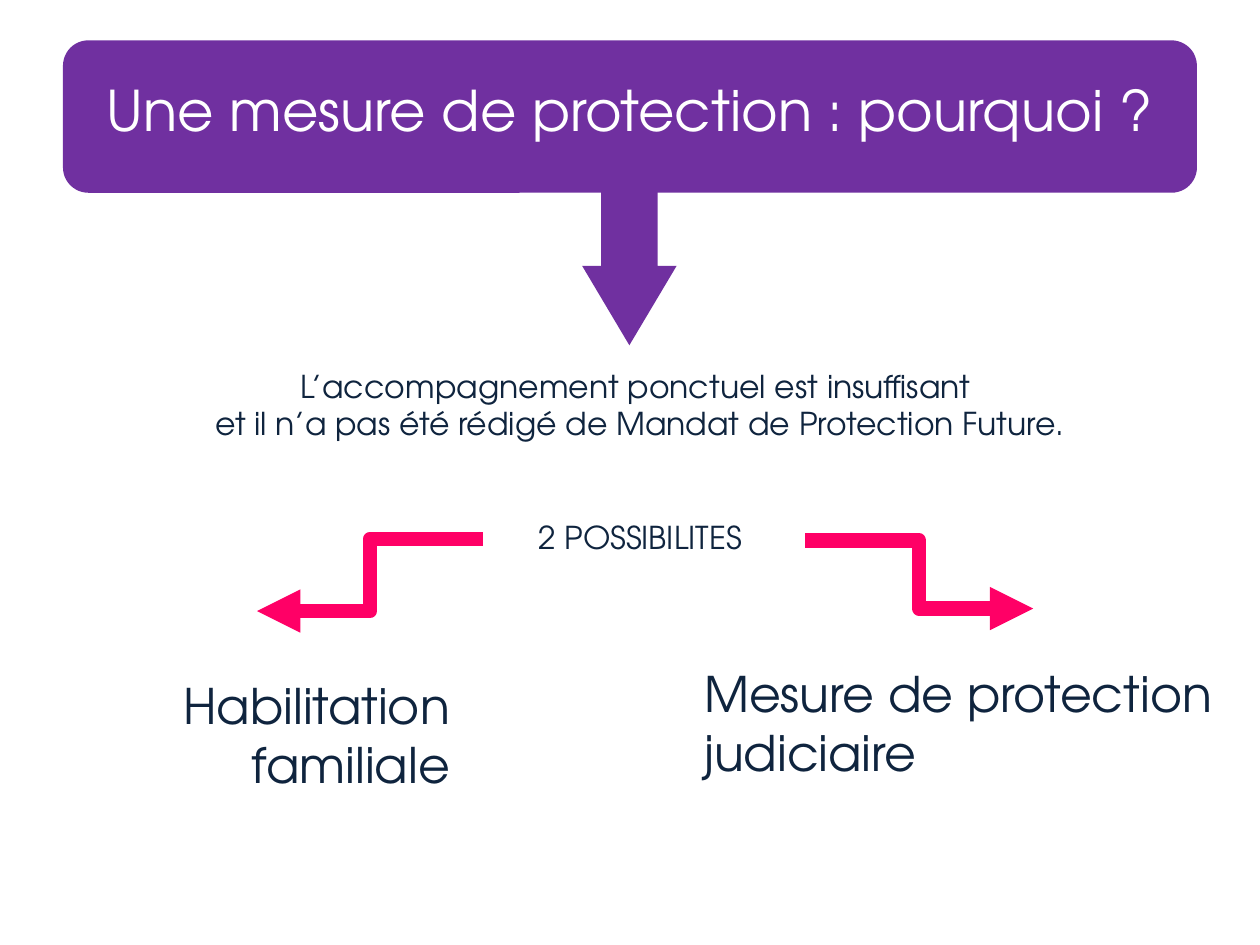
from dataclasses import dataclass

from lxml.etree import SubElement as Sub
from pptx import Presentation
from pptx.dml.color import RGBColor as Rgb
from pptx.enum.shapes import MSO_CONNECTOR as Conn, MSO_SHAPE as Kind
from pptx.enum.text import MSO_ANCHOR as Anchor, MSO_AUTO_SIZE as Auto, PP_ALIGN as Align
from pptx.oxml.ns import qn
from pptx.util import Inches, Pt


@dataclass(frozen=True)
class Theme:
    font: str = "TeX Gyre Adventor"
    fill: Rgb = Rgb(0x70, 0x30, 0xA0)
    link: Rgb = Rgb(0xFF, 0x00, 0x66)
    ink: Rgb = Rgb(0x0F, 0x24, 0x3E)
    white: Rgb = Rgb(0xFF, 0xFF, 0xFF)
    head: Pt = Pt(32)
    body: Pt = Pt(18)
    large: Pt = Pt(28)
    line: Pt = Pt(8.25)
    gap: Pt = Pt(43.2)


look = Theme()


def scale(box):
    return [Inches(n) for n in box]


def write(frame, lines, size, color, align):
    frame.word_wrap = True
    frame.auto_size = Auto.NONE
    frame.vertical_anchor = Anchor.TOP
    for i, line in enumerate(lines):
        para = frame.add_paragraph() if i else frame.paragraphs[0]
        para.alignment = align
        run = para.add_run()
        run.text = line
        run.font.name = look.font
        run.font.size = size
        run.font.color.rgb = color


def add_text(slide, box, lines, size, align):
    frame = slide.shapes.add_textbox(*scale(box)).text_frame
    write(frame, lines, size, look.ink, align)
    return frame


def add_solid(slide, kind, box):
    shape = slide.shapes.add_shape(kind, *scale(box))
    shape.shadow.inherit = False
    shape.fill.solid()
    shape.fill.fore_color.rgb = look.fill
    shape.line.fill.background()
    return shape


def add_banner(slide, box, text):
    left, top, width, height = box
    panel = add_solid(slide, Kind.ROUNDED_RECTANGLE, box)
    title = slide.shapes.title
    inset = 0.23
    title.left, title.top, title.width, title.height = scale(
        (left, top + inset, width, height - inset))
    write(title.text_frame, [text], look.head, look.white, Align.CENTER)
    panel.element.addnext(title.element)


def add_drop(slide, box):
    arrow = add_solid(slide, Kind.DOWN_ARROW, box)
    arrow.adjustments[0] = 0.6
    arrow.adjustments[1] = 0.84


def add_reason(slide, box, lines):
    frame = add_text(slide, box, lines, look.body, Align.CENTER)
    frame.paragraphs[-1].space_before = look.gap


def add_link(slide, start, end):
    link = slide.shapes.add_connector(Conn.ELBOW, *scale(start + end))
    link.line.color.rgb = look.link
    link.line.width = look.line
    props = link.element.spPr
    line = props.find(qn("a:ln"))
    Sub(line, qn("a:round"))
    Sub(line, qn("a:tailEnd"), type="triangle")
    Sub(props, qn("a:effectLst"))


def main():
    deck = Presentation()
    deck.slide_width, deck.slide_height = Inches(10), Inches(7.5)
    slide = deck.slides.add_slide(deck.slide_layouts[5])
    add_banner(slide, (0.5, 0.32, 9, 1.21), "Une mesure de protection : pourquoi ?")
    add_drop(slide, (4.62, 1.49, 0.75, 1.25))
    add_reason(slide, (0.5, 2.86, 9.16, 1.62), [
        "L’accompagnement ponctuel est insuffisant ",
        "et il n’a pas été rédigé de Mandat de Protection Future.",
        "2 POSSIBILITES",
    ])
    add_text(slide, (5.49, 5.22, 4.42, 1.01),
             ["Mesure de protection judiciaire"], look.large, Align.LEFT)
    add_link(slide, (3.83, 4.28), (2.04, 4.85))
    add_link(slide, (6.39, 4.29), (8.2, 4.83))
    add_text(slide, (0.3, 5.31, 3.37, 1.01),
             ["Habilitation", "familiale"], look.large, Align.RIGHT)
    deck.save("out.pptx")


if __name__ == "__main__":
    main()
